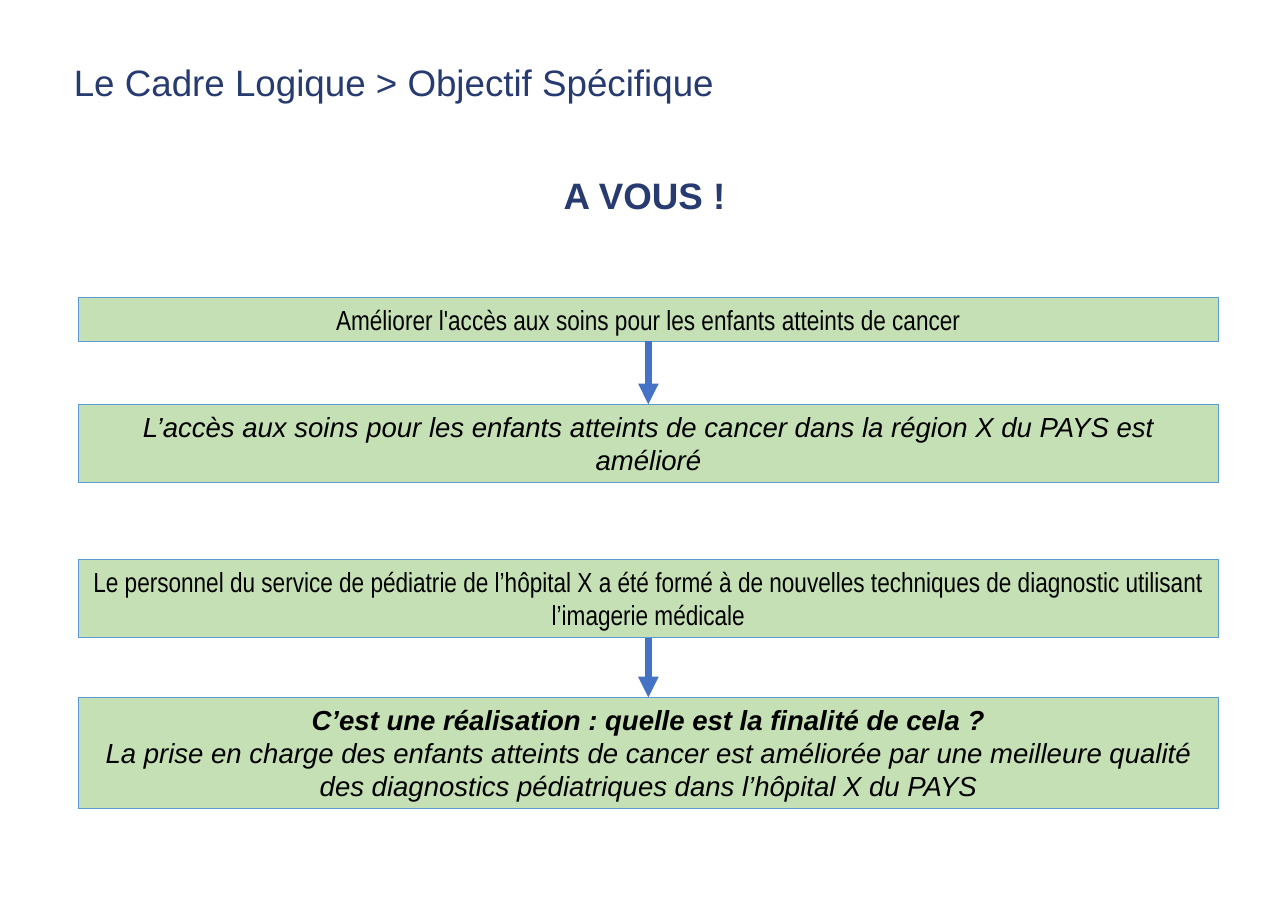
from pptx import Presentation
from pptx.dml.color import RGBColor
from pptx.enum.shapes import MSO_CONNECTOR, MSO_SHAPE
from pptx.enum.text import MSO_ANCHOR, MSO_AUTO_SIZE, PP_ALIGN
from pptx.oxml.ns import qn
from pptx.util import Inches, Pt
from lxml import etree

RECTANGLE = MSO_SHAPE.RECTANGLE
STRAIGHT = MSO_CONNECTOR.STRAIGHT
TOP, MIDDLE = MSO_ANCHOR.TOP, MSO_ANCHOR.MIDDLE
LEFT, CENTER = PP_ALIGN.LEFT, PP_ALIGN.CENTER
NO_FIT, GROW = MSO_AUTO_SIZE.NONE, MSO_AUTO_SIZE.SHAPE_TO_FIT_TEXT
BOTTOM_SITE, TOP_SITE = 2, 0

COLORS = {
    "heading": "273B70",
    "text": "000000",
    "box": "C5E0B4",
    "border": "5B9BD5",
    "arrow": "4472C4",
}
BOX_LEFT, BOX_WIDTH = 0.71, 10.35
HEADING_WIDTH, HEADING_HEIGHT = 10.78, 0.86

EXERCISES = [
    (
        (2.7, 0.4, "Arial Narrow", [
            ("Améliorer l'accès aux soins pour les enfants atteints de cancer", False, False),
        ]),
        (3.67, 0.71, "Arial", [
            ("L’accès aux soins pour les enfants atteints de cancer dans la région X du PAYS "
             "est amélioré", False, True),
        ]),
    ),
    (
        (5.08, 0.71, "Arial Narrow", [
            ("Le personnel du service de pédiatrie de l’hôpital X a été formé à de nouvelles "
             "techniques de diagnostic utilisant l’imagerie médicale", False, False),
        ]),
        (6.33, 1.01, "Arial", [
            ("C’est une réalisation : quelle est la finalité de cela ?", True, True),
            ("La prise en charge des enfants atteints de cancer est améliorée par une meilleure "
             "qualité des diagnostics pédiatriques dans l’hôpital X du PAYS", False, True),
        ]),
    ),
]


def color(name):
    """Return the named colour."""
    return RGBColor.from_string(COLORS[name])


def format_paragraph(para, size, family, color_name, bold, italic, align):
    """Format the paragraph and its runs."""
    para.alignment = align
    for span in para.runs:
        font = span.font
        font.size = Pt(size)
        font.name = family
        font.bold = bold
        font.italic = italic
        font.color.rgb = color(color_name)


def fill_heading(shape, left, top, text, bold, align):
    """Place a heading and write its text."""
    shape.left, shape.top = Inches(left), Inches(top)
    shape.width, shape.height = Inches(HEADING_WIDTH), Inches(HEADING_HEIGHT)
    frame = shape.text_frame
    frame.text = text
    frame.word_wrap = True
    frame.auto_size = NO_FIT
    frame.vertical_anchor = MIDDLE
    para = frame.paragraphs[0]
    para.line_spacing = 0.9
    format_paragraph(para, 24, "Arial", "heading", bold, False, align)


def add_statement(page, top, height, family, lines):
    """Add a green box holding one statement."""
    box = page.shapes.add_shape(
        RECTANGLE, Inches(BOX_LEFT), Inches(top), Inches(BOX_WIDTH), Inches(height))
    box.shadow.inherit = False
    box.fill.solid()
    box.fill.fore_color.rgb = color("box")
    box.line.color.rgb = color("border")
    box.line.width = Pt(0.5)
    frame = box.text_frame
    frame.text = "\n".join(text for text, bold, italic in lines)
    frame.word_wrap = True
    frame.auto_size = GROW
    frame.vertical_anchor = TOP
    for para, (text, bold, italic) in zip(frame.paragraphs, lines):
        format_paragraph(para, 18, family, "text", bold, italic, CENTER)
    return box


def add_arrow(page, source, target):
    """Join two boxes with a downward arrow."""
    arrow = page.shapes.add_connector(STRAIGHT, 0, 0, 0, 0)
    arrow.begin_connect(source, BOTTOM_SITE)
    arrow.end_connect(target, TOP_SITE)
    arrow.line.color.rgb = color("arrow")
    arrow.line.width = Pt(4.5)
    properties = arrow.element.spPr
    etree.SubElement(properties.find(qn("a:ln")), qn("a:tailEnd"), type="triangle")
    etree.SubElement(properties, qn("a:effectLst"))


def add_exercise(page, question, answer):
    """Add a question box, its answer box and the arrow between them."""
    add_arrow(page, add_statement(page, *question), add_statement(page, *answer))


def main():
    """Build the slide and save the deck."""
    deck = Presentation()
    deck.slide_width, deck.slide_height = Inches(11.69), Inches(8.27)
    page = deck.slides.add_slide(deck.slide_layouts.get_by_name("Title Only"))
    fill_heading(page.shapes.title, 0.57, 0.34,
                 "Le Cadre Logique > Objectif Spécifique", False, LEFT)
    call = page.shapes.add_textbox(0, 0, 0, 0)
    fill_heading(call, 0.46, 1.36, "A VOUS !", True, CENTER)
    for question, answer in EXERCISES:
        add_exercise(page, question, answer)
    deck.save("out.pptx")


if __name__ == "__main__":
    main()
